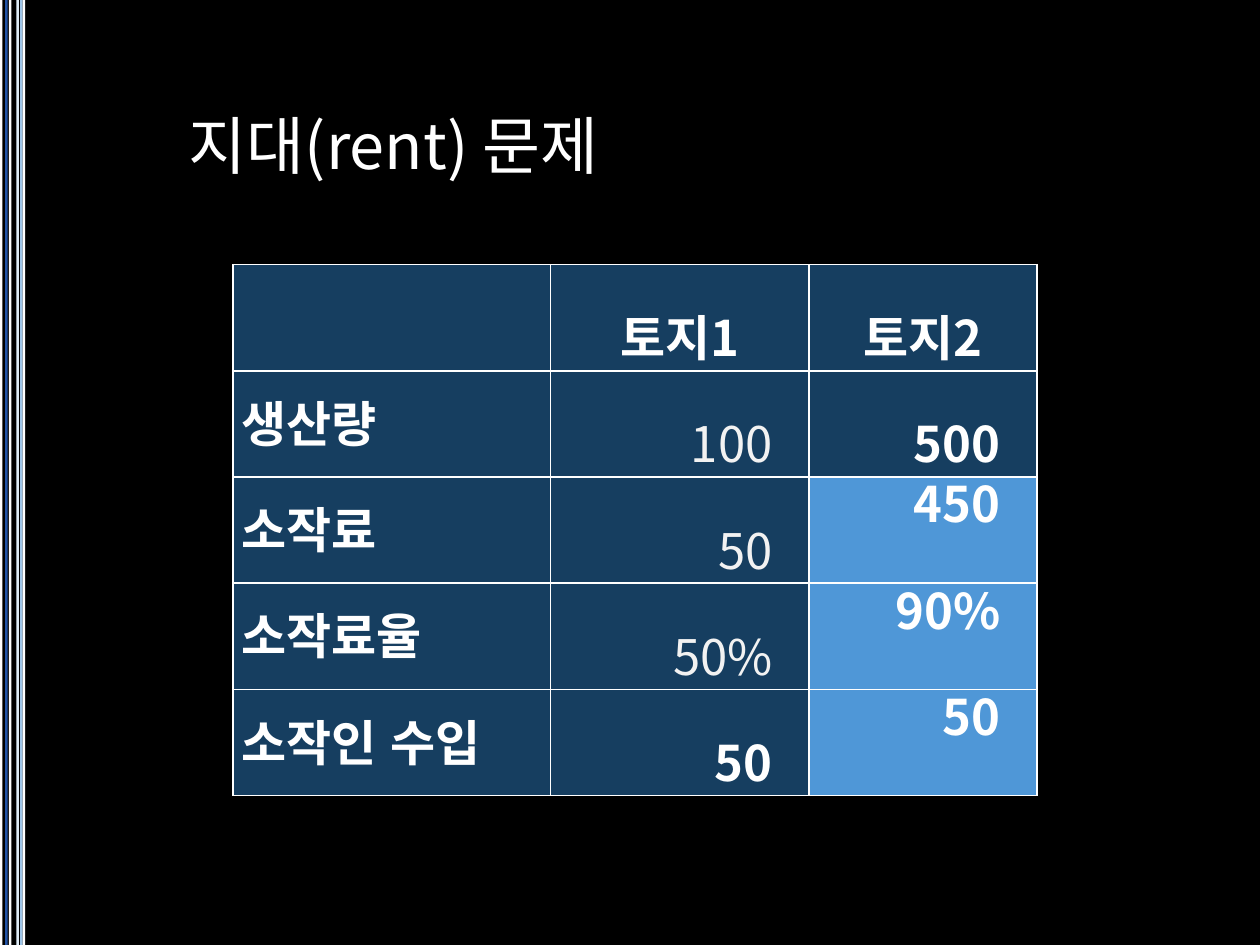
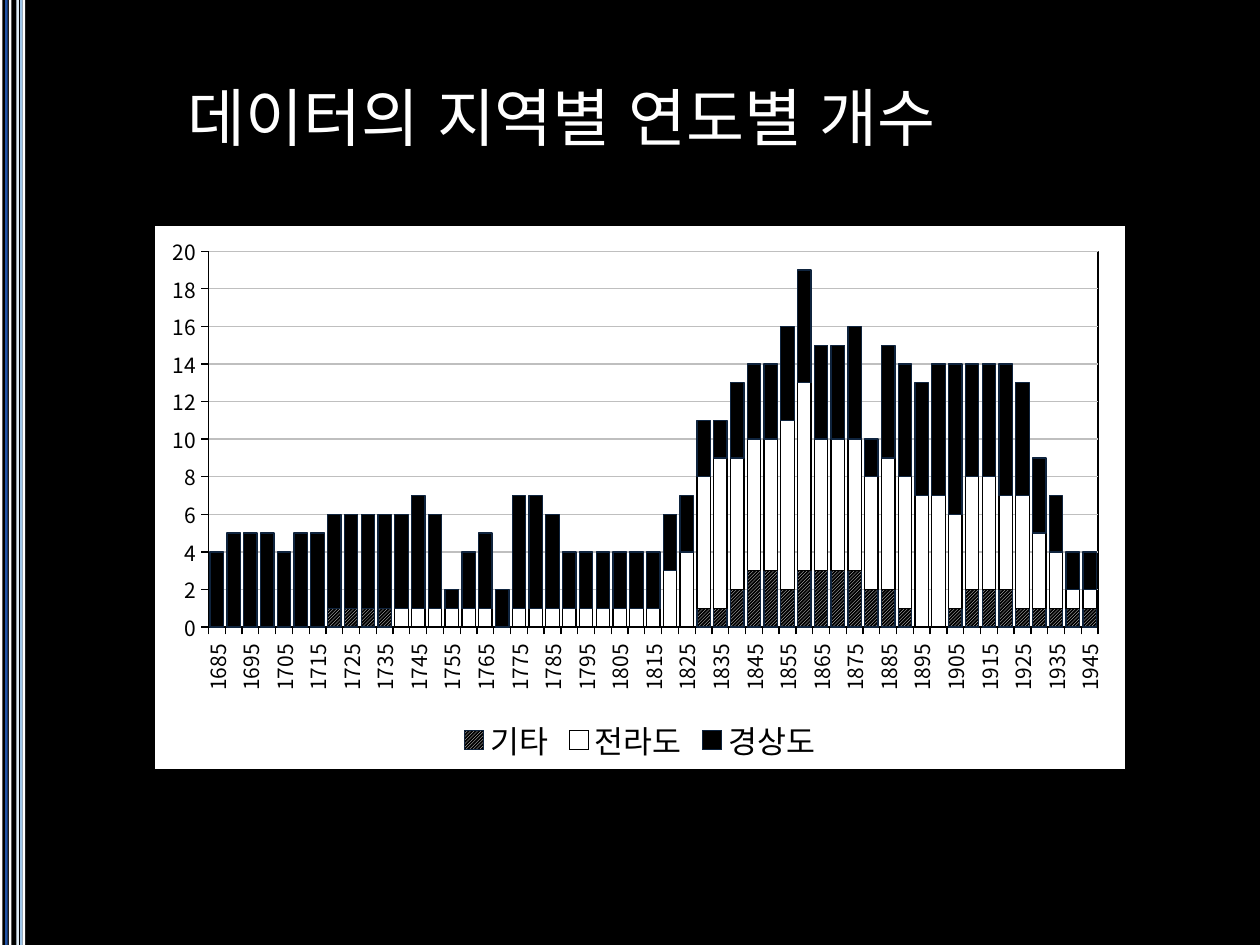
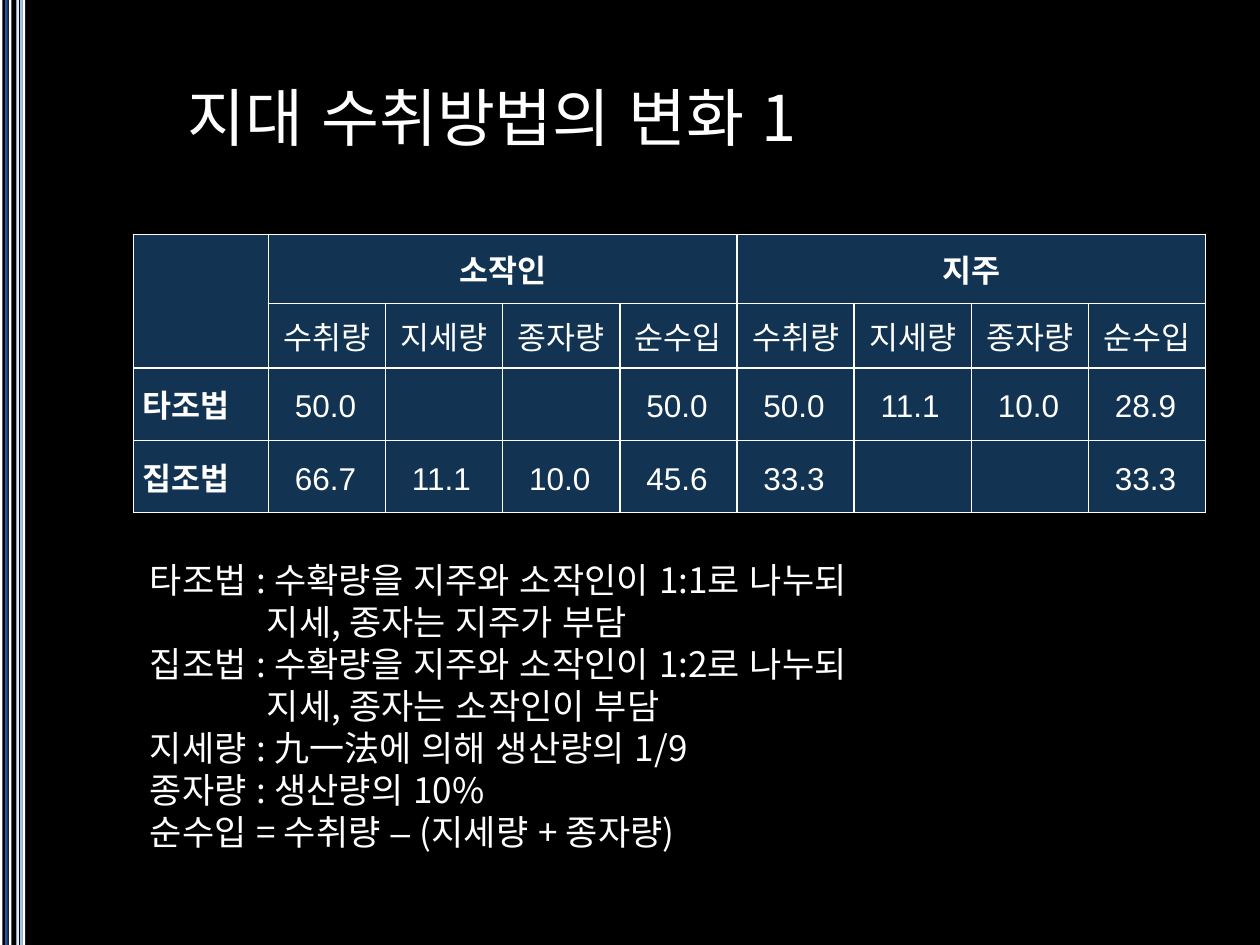
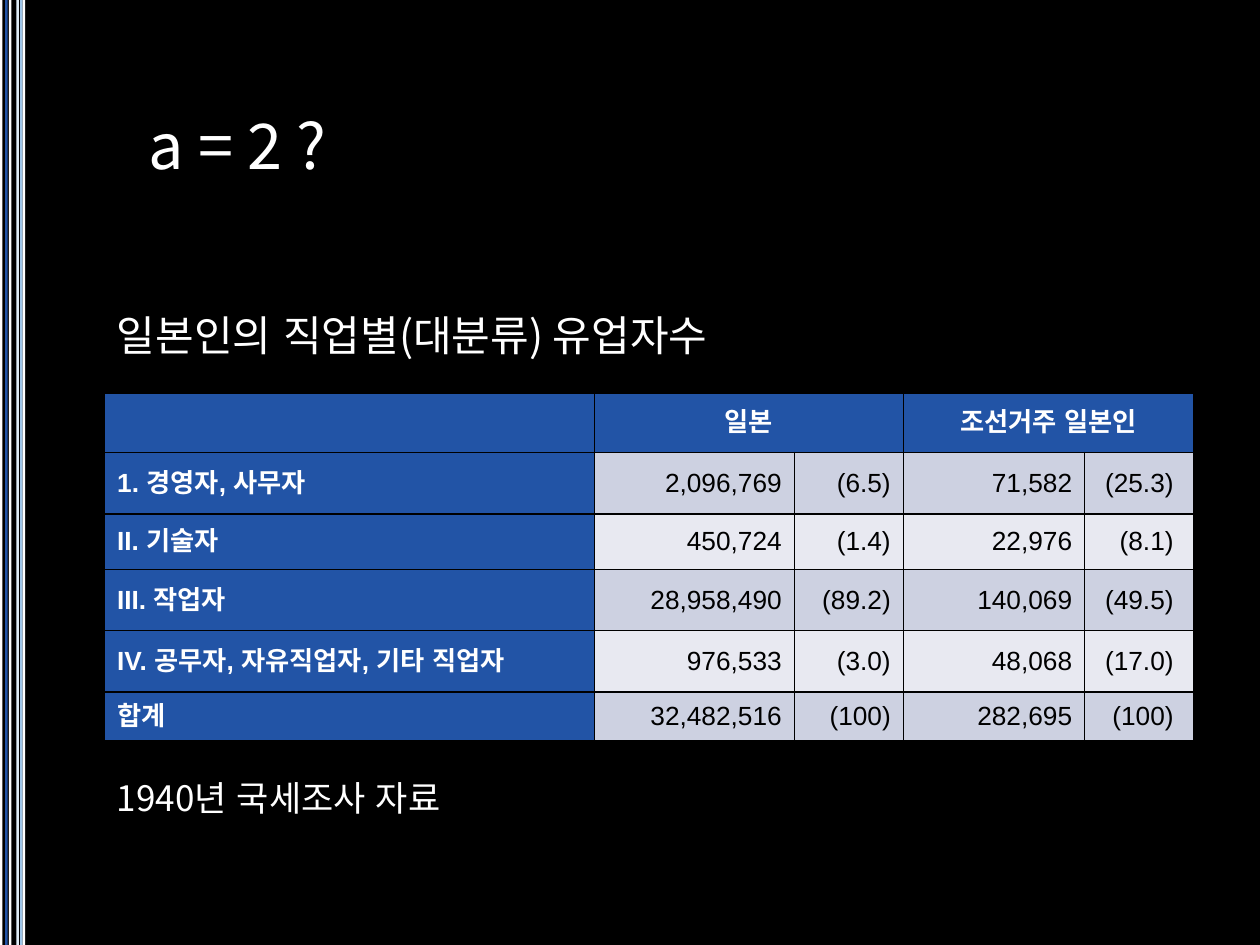
from dataclasses import dataclass

from lxml import etree
from pptx import Presentation
from pptx import util as u
from pptx.chart.data import CategoryChartData
from pptx.dml.color import RGBColor
from pptx.enum import chart as charts
from pptx.enum import dml, shapes, text
from pptx.oxml import parse_xml
from pptx.oxml.ns import nsdecls, qn

BLACK = RGBColor(0x00, 0x00, 0x00)
WHITE = RGBColor(0xFF, 0xFF, 0xFF)
OFF_WHITE = RGBColor(0xF2, 0xF2, 0xF2)
NAVY = RGBColor(0x16, 0x3E, 0x60)
DEEP_NAVY = RGBColor(0x12, 0x34, 0x52)
INK = RGBColor(0x0F, 0x24, 0x3E)
BLUE = RGBColor(0x22, 0x54, 0xA6)
SKY = RGBColor(0x4F, 0x97, 0xD7)
LIGHT_BLUE = RGBColor(0x9F, 0xC6, 0xE9)
PALE_BLUE = RGBColor(0xE0, 0xED, 0xF8)
LAVENDER = RGBColor(0xCD, 0xD1, 0xE1)
MIST = RGBColor(0xE8, 0xE9, 0xF1)
GREY = RGBColor(0xBF, 0xBF, 0xBF)

KOREAN = "Noto Sans CJK KR"
LATIN = "Arial"
LEFT, CENTER, RIGHT = text.PP_ALIGN.LEFT, text.PP_ALIGN.CENTER, text.PP_ALIGN.RIGHT
TOP, MIDDLE = text.MSO_ANCHOR.TOP, text.MSO_ANCHOR.MIDDLE

# The slide is a grid of square units, 100 columns by 75 rows.
COLUMNS, ROWS = 100, 75
UNIT = u.Inches(0.1)

# Left edge, width and colour of each vertical stripe at the slide's left side.
STRIPES = [
    (0, 0.2, WHITE), (0.7, 0.2, WHITE), (1.1, 0.1, BLACK), (1.3, 0.2, PALE_BLUE),
    (1.6, 0.2, LIGHT_BLUE), (1.8, 0.2, WHITE), (0.4, 0.2, BLUE),
]

NO_STYLE = "{2D5ABB26-0587-4C30-8999-92F81FD0307C}"


@dataclass
class TableStyle:
    font: str
    size: float
    spacing: float
    inset: float
    border: RGBColor = None
    anchor: text.MSO_ANCHOR = MIDDLE


@dataclass
class CellLook:
    fill: RGBColor = None
    color: RGBColor = WHITE
    bold: bool = False
    align: text.PP_ALIGN = LEFT
    indent_left: float = 0
    indent_right: float = 0


def grid(count):
    return u.Emu(round(count * UNIT))


def format_runs(paragraph, font, size, color, bold=False):
    """Hangul takes its glyphs by fallback, with the word spaces of LATIN."""
    for run in paragraph.runs:
        run.font.name = font
        run.font.size = u.Pt(size)
        run.font.bold = bold
        run.font.color.rgb = color
        etree.SubElement(run.font._element, qn("a:ea"), typeface=LATIN)


def add_stripes(presentation, slide):
    """Draw the stripes on a slide, then hand them to the master."""
    for left, width, color in STRIPES:
        stripe = slide.shapes.add_shape(
            shapes.MSO_SHAPE.RECTANGLE, grid(left), 0, grid(width), grid(ROWS))
        stripe.shadow.inherit = False
        stripe.fill.solid()
        stripe.fill.fore_color.rgb = color
        stripe.line.fill.background()
        presentation.slide_master.shapes.element.append(stripe.element)


def add_title(slide, title, left, top, width=82):
    box = slide.shapes.add_textbox(grid(left), grid(top), grid(width), grid(12.5))
    frame = box.text_frame
    frame.word_wrap = True
    frame.vertical_anchor = MIDDLE
    frame.margin_left = frame.margin_right = grid(2)
    frame.margin_top = frame.margin_bottom = grid(2)
    frame.text = title
    format_runs(frame.paragraphs[0], KOREAN, 36, WHITE)


def add_note(slide, left, top, width, height, size, lines, hanging=0):
    """Add paragraphs; a line break inside one continues at the hanging indent."""
    box = slide.shapes.add_textbox(grid(left), grid(top), grid(width), grid(height))
    frame = box.text_frame
    frame.word_wrap = True
    frame.text = "\n".join(lines)
    for paragraph in frame.paragraphs:
        paragraph.line_spacing = u.Pt(size * 1.2)
        format_runs(paragraph, KOREAN, size, WHITE)
        if hanging:
            properties = paragraph._p.get_or_add_pPr()
            properties.set("marL", str(grid(hanging)))
            properties.set("indent", str(-grid(hanging)))


def add_borders(cell, color):
    properties = cell._tc.get_or_add_tcPr()
    for index, side in enumerate(("lnL", "lnR", "lnT", "lnB")):
        properties.insert(index, parse_xml(
            f'<a:{side} {nsdecls("a")} w="12700"><a:solidFill>'
            f'<a:srgbClr val="{color}"/></a:solidFill></a:{side}>'))


def format_cell(cell, content, style, look):
    cell.vertical_anchor = style.anchor
    cell.margin_left = grid(style.inset + look.indent_left)
    cell.margin_right = grid(style.inset + look.indent_right)
    cell.margin_top = cell.margin_bottom = 0
    if look.fill is None:
        cell.fill.background()
    else:
        cell.fill.solid()
        cell.fill.fore_color.rgb = look.fill
    if style.border is not None:
        add_borders(cell, style.border)
    if content:
        cell.text_frame.text = content
        paragraph = cell.text_frame.paragraphs[0]
        paragraph.alignment = look.align
        paragraph.line_spacing = style.spacing
        format_runs(paragraph, style.font, style.size, look.color, look.bold)


def add_table(slide, left, top, widths, heights, contents, style, choose_look, merges=()):
    """choose_look(row, column) gives the CellLook; merges pairs corner cells."""
    frame = slide.shapes.add_table(
        len(heights), len(widths), grid(left), grid(top),
        grid(sum(widths)), grid(sum(heights)))
    table = frame.table
    table.first_row = table.horz_banding = False
    table._tbl.tblPr.find(qn("a:tableStyleId")).text = NO_STYLE
    for column, width in zip(table.columns, widths):
        column.width = grid(width)
    for row, height in zip(table.rows, heights):
        row.height = grid(height)
    for row, line in enumerate(contents):
        for column, content in enumerate(line):
            format_cell(table.cell(row, column), content, style, choose_look(row, column))
    for first, last in merges:
        table.cell(*first).merge(table.cell(*last))


def set_line(line, color):
    line.color.rgb = color
    line.width = u.Pt(0.75)


def frame_properties(fill=None):
    """Chart part properties: an optional fill and a thin black border."""
    paint = f'<a:solidFill><a:srgbClr val="{fill}"/></a:solidFill>' if fill else "<a:noFill/>"
    return parse_xml(
        f'<c:spPr {nsdecls("c", "a")}>{paint}<a:ln w="9525"><a:solidFill>'
        f'<a:srgbClr val="{BLACK}"/></a:solidFill></a:ln></c:spPr>')


def place_plot(chart, **shares):
    """Fix the inner plot area by shares (x, y, w, h) of the chart."""
    plot_area = chart._chartSpace.chart.plotArea
    for layout in plot_area.findall(qn("c:layout")):
        plot_area.remove(layout)
    sizes = "".join(f'<c:{name} val="{share}"/>' for name, share in shares.items())
    plot_area.insert(0, parse_xml(
        f'<c:layout {nsdecls("c")}><c:manualLayout><c:layoutTarget val="inner"/>'
        f'<c:xMode val="edge"/><c:yMode val="edge"/>{sizes}</c:manualLayout></c:layout>'))
    plot_area.append(frame_properties())


def format_axes(chart):
    for axis in (chart.category_axis, chart.value_axis):
        axis.major_tick_mark = charts.XL_TICK_MARK.OUTSIDE
        axis.minor_tick_mark = charts.XL_TICK_MARK.NONE
        set_line(axis.format.line, BLACK)
        axis.tick_labels.font.size = u.Pt(12)
    values = chart.value_axis
    values.minimum_scale, values.maximum_scale, values.major_unit = 0, 20, 2
    set_line(values.major_gridlines.format.line, GREY)
    years = chart.category_axis._element
    years.find(qn("c:txPr")).find(qn("a:bodyPr")).set("rot", "-5400000")
    skip = parse_xml(f'<c:tickLblSkip {nsdecls("c")} val="2"/>')
    years.find(qn("c:noMultiLvlLbl")).addprevious(skip)


def format_series(chart):
    other, jeolla, gyeongsang = chart.plots[0].series
    fill = other.format.fill
    fill.patterned()
    fill.pattern = dml.MSO_PATTERN.DARK_UPWARD_DIAGONAL
    fill.fore_color.rgb, fill.back_color.rgb = WHITE, BLACK
    for series, color in ((jeolla, WHITE), (gyeongsang, BLACK)):
        series.format.fill.solid()
        series.format.fill.fore_color.rgb = color
    for series, color in ((other, INK), (jeolla, BLACK), (gyeongsang, INK)):
        series.invert_if_negative = False
        set_line(series.format.line, color)


def add_stacked_chart(slide, left, top, width, height, categories, values):
    data = CategoryChartData()
    data.categories = categories
    for name, numbers in values.items():
        data.add_series(name, numbers)
    chart = slide.shapes.add_chart(
        charts.XL_CHART_TYPE.COLUMN_STACKED, grid(left), grid(top),
        grid(width), grid(height), data).chart
    chart.has_title = False
    chart.font.name = KOREAN
    chart.font.size = u.Pt(12)
    chart.font.color.rgb = BLACK
    chart._chartSpace.find(qn("c:txPr")).addprevious(frame_properties(WHITE))
    chart.has_legend = True
    chart.legend.position = charts.XL_LEGEND_POSITION.BOTTOM
    chart.legend.include_in_layout = False
    chart.legend.font.size = u.Pt(18)
    plot = chart.plots[0]
    plot.gap_width, plot.overlap, plot.vary_by_categories = 25, 100, False
    format_axes(chart)
    format_series(chart)
    place_plot(chart, x=4.3 / width, y=2.1 / height, w=70.7 / width, h=29.9 / height)


def rent_look(row, column):
    if row == 0 or column == 0:
        return CellLook(NAVY, bold=True, align=LEFT if column == 0 else CENTER)
    bold = column == 2 or row == 4
    return CellLook(
        SKY if column == 2 and row > 1 else NAVY, WHITE if bold else OFF_WHITE,
        bold, RIGHT, indent_right=2.2)


def build_rent_problem(slide):
    add_title(slide, "지대(rent) 문제", 13, 5.2, 56)
    row_height = 8.43
    contents = [
        ["", "토지1", "토지2"],
        ["생산량", "100", "500"],
        ["소작료", "50", ""],
        ["소작료율", "50%", ""],
        ["소작인 수입", "50", ""],
    ]
    add_table(slide, 18.5, 21, [25.2, 20.5, 18.1], [row_height] * 5, contents,
              TableStyle(KOREAN, 28, 1.5, 0.7, WHITE, TOP), rent_look)
    answers = [["450"], ["90%"], ["50"]]
    add_table(slide, 64.2, 34.2, [18.1], [row_height] * 3, answers,
              TableStyle(KOREAN, 28, 1.5, 0.7, anchor=TOP),
              lambda row, column: CellLook(bold=True, align=RIGHT, indent_right=2.2))


def build_data_counts(slide):
    add_title(slide, "데이터의 지역별 연도별 개수", 12.9, 3)
    years = [f"{year} " for year in range(1685, 1950, 5)]
    counts = {
        "기타": [0] * 7 + [1] * 4 + [0] * 18 + [
            1, 1, 2, 3, 3, 2, 3, 3, 3, 3, 2, 2, 1, 0, 0, 1, 2, 2, 2, 1, 1, 1, 1, 1],
        "전라도": [0] * 11 + [1] * 6 + [0] + [1] * 9 + [
            3, 4, 7, 8, 7, 7, 7, 9, 10, 7, 7, 7, 6, 7, 7, 7, 7, 5, 6, 6, 5, 6, 4, 3, 1, 1],
        "경상도": [
            4, 5, 5, 5, 4, 5, 5, 5, 5, 5, 5, 5, 6, 5, 1, 3, 4, 2, 6, 6, 5, 3, 3, 3, 3, 3, 3,
            3, 3, 3, 2, 4, 4, 4, 5, 6, 5, 5, 6, 2, 6, 6, 6, 7, 8, 6, 6, 7, 6, 4, 3, 2, 2],
    }
    add_stacked_chart(slide, 12.2, 17.8, 77.2, 43.3, years, counts)


def collection_look(row, column):
    if row < 2:
        return CellLook(DEEP_NAVY, bold=row == 0, align=CENTER)
    if column == 0:
        return CellLook(DEEP_NAVY, bold=True)
    return CellLook(DEEP_NAVY, indent_left=1.4)


def build_collection_methods(slide):
    add_title(slide, "지대 수취방법의 변화 1", 12.9, 3)
    measures = ["수취량", "지세량", "종자량", "순수입"]
    contents = [
        ["", "소작인", "", "", "", "지주", "", "", ""],
        [""] + measures * 2,
        ["타조법", "50.0", "", "", "50.0", "50.0", "11.1", "10.0", "28.9"],
        ["집조법", "66.7", "11.1", "10.0", "45.6", "33.3", "", "", "33.3"],
    ]
    add_table(slide, 10.6, 18.6, [10.7] + [9.3] * 8, [5.5, 5.1, 5.75, 5.75], contents,
              TableStyle(LATIN, 18, 1.15, 0.7, WHITE), collection_look,
              [((0, 0), (1, 0)), ((0, 1), (0, 4)), ((0, 5), (0, 8))])
    add_note(slide, 10.9, 43.8, 85, 24.6, 20, [
        "타조법 : 수확량을 지주와 소작인이 1:1로 나누되\v지세, 종자는 지주가 부담",
        "집조법 : 수확량을 지주와 소작인이 1:2로 나누되\v지세, 종자는 소작인이 부담",
        "지세량 : 九一法에 의해 생산량의 1/9",
        "종자량 : 생산량의 10%",
        "순수입 = 수취량 – (지세량 + 종자량)",
    ], hanging=9.3)


def occupation_look(row, column):
    if row == 0 or column == 0:
        return CellLook(BLUE, bold=True, align=CENTER if row == 0 else LEFT)
    return CellLook(LAVENDER if row % 2 else MIST, BLACK, align=RIGHT,
                    indent_right=0.6 if column == 4 else 0)


def build_occupations(slide):
    add_title(slide, "a = 2 ?", 9.8, 5.2)
    contents = [
        ["", "일본", "", "조선거주 일본인", ""],
        ["1. 경영자, 사무자", "2,096,769", "(6.5)", "71,582", "(25.3)"],
        ["II. 기술자", "450,724", "(1.4)", "22,976", "(8.1)"],
        ["III. 작업자", "28,958,490", "(89.2)", "140,069", "(49.5)"],
        ["IV. 공무자, 자유직업자, 기타 직업자", "976,533", "(3.0)", "48,068", "(17.0)"],
        ["합계", "32,482,516", "(100)", "282,695", "(100)"],
    ]
    add_table(slide, 8.3, 31.2, [38.9, 15.85, 8.65, 14.4, 8.65],
              [4.7, 4.9, 4.4, 4.85, 4.9, 3.85], contents,
              TableStyle(LATIN, 15, 1, 1, BLACK), occupation_look,
              [((0, 1), (0, 2)), ((0, 3), (0, 4))])
    add_note(slide, 8.3, 24.1, 63.8, 5, 24, ["일본인의 직업별(대분류) 유업자수"])
    add_note(slide, 8.3, 61.1, 50, 4.4, 20, ["1940년 국세조사 자료"])


def main():
    presentation = Presentation()
    presentation.slide_width, presentation.slide_height = grid(COLUMNS), grid(ROWS)
    background = presentation.slide_master.background.fill
    background.solid()
    background.fore_color.rgb = BLACK
    builders = [build_rent_problem, build_data_counts,
                build_collection_methods, build_occupations]
    for index, build in enumerate(builders):
        slide = presentation.slides.add_slide(presentation.slide_layouts[6])
        if index == 0:
            add_stripes(presentation, slide)
        build(slide)
    presentation.save("out.pptx")


if __name__ == "__main__":
    main()
